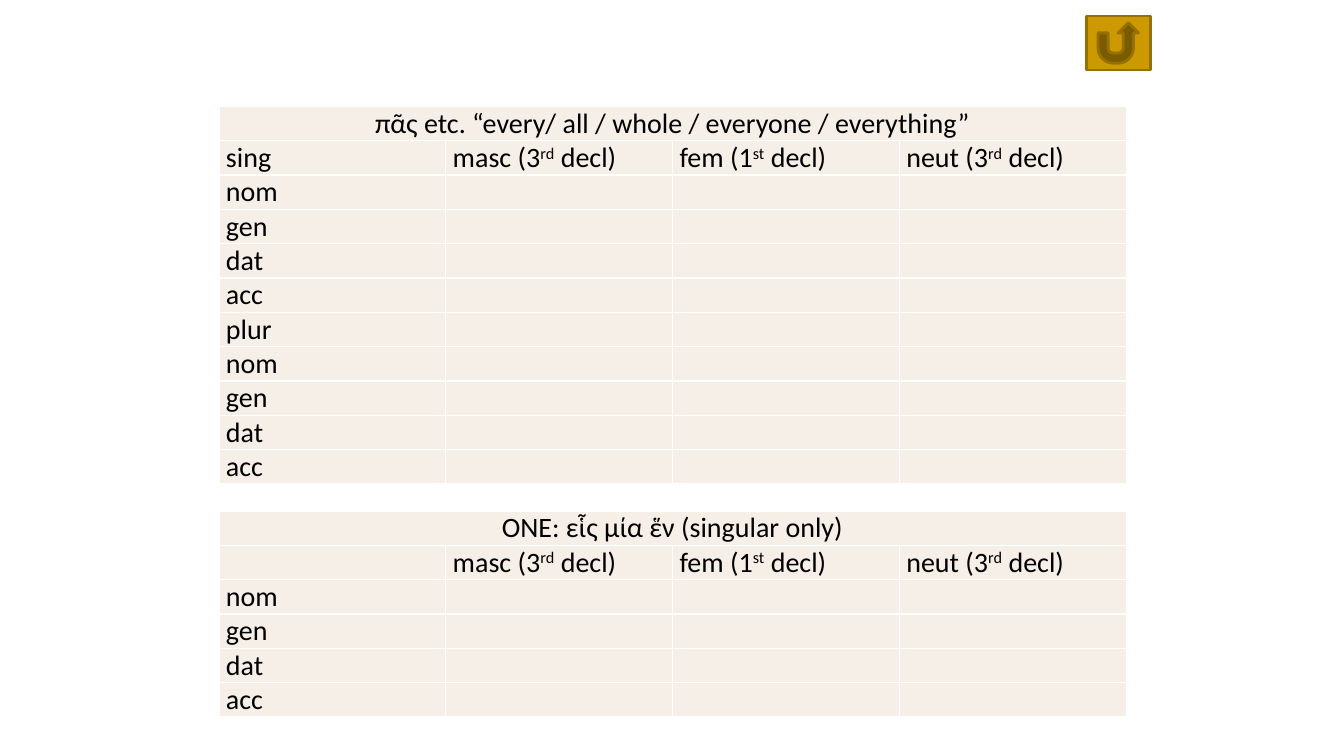
from lxml.etree import SubElement
from pptx import Presentation
from pptx.dml.color import RGBColor
from pptx.enum.shapes import MSO_SHAPE
from pptx.enum.text import PP_ALIGN
from pptx.oxml.ns import qn
from pptx.util import Pt

ROW_HEIGHT = 24.4
GENDERS = [("masc (3", "rd", " decl)"), ("fem (1", "st", " decl)"), ("neut (3", "rd", " decl)")]
CASES = ["nom", "gen", "dat", "acc"]


def color(hex_code):
    return RGBColor.from_string(hex_code)


def add_borders(cell, hex_code):
    properties = cell._tc.get_or_add_tcPr()
    for side in ("a:lnL", "a:lnR", "a:lnT", "a:lnB"):
        border = SubElement(properties, qn(side), w=str(Pt(1)))
        fill = SubElement(border, qn("a:solidFill"))
        SubElement(fill, qn("a:srgbClr"), val=hex_code)


def style_cell(cell):
    add_borders(cell, "FFFFFF")
    cell.fill.solid()
    cell.fill.fore_color.rgb = color("F6EFE7")
    cell.margin_left = cell.margin_right = Pt(5)
    cell.margin_top = cell.margin_bottom = 0


def write(cell, *parts):
    """Write the parts as runs, raising the second one."""
    for index, part in enumerate(parts):
        run = cell.text_frame.paragraphs[0].add_run()
        run.text = part
        run.font.size = Pt(20)
        run.font.name = "Calibri"
        run.font.color.rgb = color("000000")
        if index == 1:
            run._r.get_or_add_rPr().set("baseline", "30000")


def add_declension(slide, left, top, width, title, labels):
    """Place a titled table with one row per label and one column per gender."""
    columns = len(GENDERS) + 1
    rows = len(labels) + 1
    table = slide.shapes.add_table(
        rows, columns, Pt(left), Pt(top), Pt(width), Pt(rows * ROW_HEIGHT)).table
    table.first_row = table.horz_banding = False
    for row in table.rows:
        row.height = Pt(ROW_HEIGHT)
    for cell in table.iter_cells():
        style_cell(cell)

    heading = table.cell(0, 0)
    heading.merge(table.cell(0, columns - 1))
    write(heading, title)
    heading.text_frame.paragraphs[0].alignment = PP_ALIGN.CENTER
    for column, gender in enumerate(GENDERS, start=1):
        write(table.cell(1, column), *gender)
    for row, label in enumerate(labels, start=1):
        if label:
            write(table.cell(row, 0), label)


def add_return_button(slide, left, top, width, height):
    button = slide.shapes.add_shape(
        MSO_SHAPE.ACTION_BUTTON_RETURN, Pt(left), Pt(top), Pt(width), Pt(height))
    button.shadow.inherit = False
    button.fill.solid()
    button.fill.fore_color.rgb = color("CC9900")
    button.line.color.rgb = color("977100")
    button.line.width = Pt(2)


def main():
    presentation = Presentation()
    presentation.slide_width, presentation.slide_height = Pt(960), Pt(540)
    slide = presentation.slides.add_slide(presentation.slide_layouts[6])
    add_declension(slide, 156.4, 76, 648,
                   "πᾶς etc. “every/ all / whole / everyone / everything”",
                   ["sing", *CASES, "plur", *CASES])
    add_declension(slide, 156.4, 365, 648,
                   "ONE: εἷς μία ἕν (singular only)", ["", *CASES])
    add_return_button(slide, 776, 11.5, 45.5, 38.5)
    presentation.save("out.pptx")


if __name__ == "__main__":
    main()
